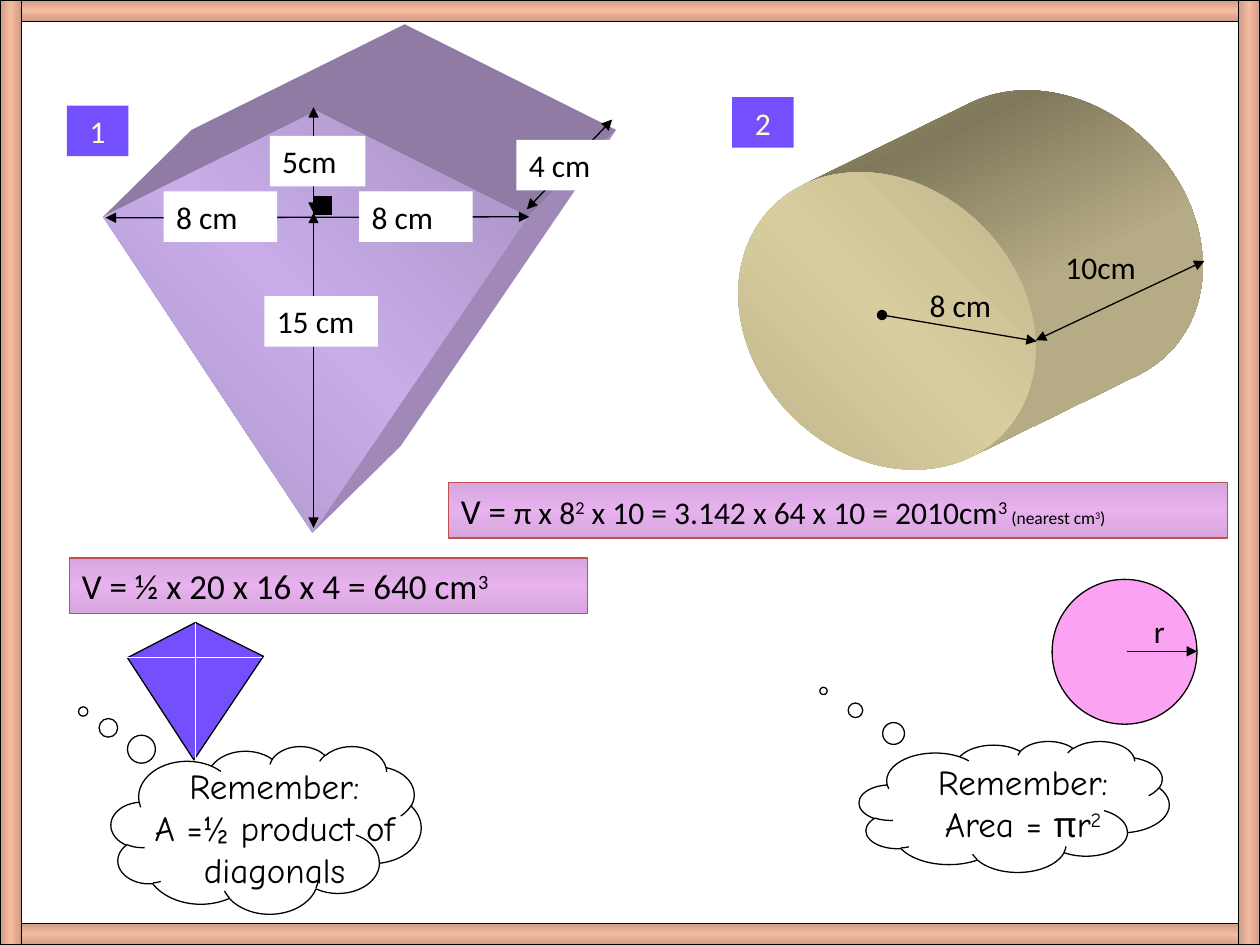
"""Build a slide on the volumes of a kite prism and a cylinder."""
from math import atan2, cos, pi, radians, sin

from lxml.etree import SubElement
from pptx import Presentation
from pptx.dml.color import RGBColor
from pptx.enum.shapes import MSO_CONNECTOR, MSO_SHAPE
from pptx.enum.text import PP_ALIGN
from pptx.oxml.ns import qn
from pptx.util import Cm, Pt

THEME = {
    "font": "Calibri", "note_font": "Comic Neue",
    "small": 10, "label": 18, "large": 20, "line": 0.75,
    "black": "000000", "white": "FFFFFF", "cream": "FFFFCC",
    "violet": "744FFD", "pink": "FCA2F3", "red": "C0504D",
    "prism_top": "907BA4", "prism_side": "A088B9",
    "prism_front": (315, [(0, "A791C3"), (50, "C8ADE9"), (100, "A791C3")]),
    "cylinder_front": (90, [(0, "B5AB84"), (50, "D8CD9E"), (100, "B5AB84")]),
    "cylinder_side": (64, [(0, "A1986F"), (20, "7F785C"), (55, "B5AB84"),
                           (85, "B5AB84"), (100, "8F8768")]),
    "formula": (90, [(0, "D8A6DE"), (50, "E6B1ED"), (100, "D8A6DE")]),
    "rail": (90, [(0, "CE9C86"), (50, "F6BBA0"), (100, "CE9C86")]),
    "post": (0, [(0, "CE9C86"), (50, "F6BBA0"), (100, "CE9C86")]),
}
LABEL, LARGE, SMALL = THEME["label"], THEME["large"], THEME["small"]
WIDTH, HEIGHT, FRAME = 25.4, 19.05, 0.43
LABEL_HEIGHT = 1.02

KITE = [(6.38, 2.24), (2.08, 4.37), (6.3, 10.74), (10.64, 4.37)]
KITE_DEPTH = (1.78, -1.75)
CYLINDER = {"center": (17.88, 6.47), "radii": (3.26, 2.71), "tilt": 45, "depth": (3.37, -1.65)}
SMALL_KITE = [(2.57, 13.26), (3.94, 12.55), (5.31, 13.23), (3.91, 15.32)]

DIMENSIONS = [
    ((2.13, 4.39), (10.67, 4.37), "triangle"),
    ((17.78, 6.35), (20.9, 6.88), "oval"),
    ((6.32, 10.64), (6.32, 4.29), "triangle"),
    ((6.32, 4.29), (6.32, 2.16), "triangle"),
    ((10.62, 4.22), (12.34, 2.41), "triangle"),
    ((20.88, 6.86), (24.28, 5.26), "triangle"),
]
LABELS = [
    ("5cm", 5.44, 2.74, 1.93, "white"),
    ("8 cm", 3.3, 3.86, 2.29, "white"),
    ("8 cm", 7.24, 3.86, 2.29, "white"),
    ("8 cm", 18.49, 5.64, 2.29, None),
    ("15 cm", 5.33, 5.97, 2.29, "white"),
    ("4 cm", 10.41, 2.82, 2.11, "white"),
    ("10cm", 21.23, 4.88, 2.11, None),
]
FORMULAS = [
    ((1.4, 11.25, 10.44, 1.12),
     [("V = ½ x 20 x 16 x 4 = 640 cm", LARGE, False), ("3", LARGE, True)]),
    ((9.04, 9.73, 15.7, 1.12),
     [("V = ", LARGE, False), ("π x 8", LABEL, False), ("2", LABEL, True),
      (" x 10 = 3.142 x 64 x 10 = 2010cm", LABEL, False), ("3 ", LABEL, True),
      ("(nearest cm", SMALL, False), ("3", SMALL, True), (")", SMALL, False)]),
]
REMINDERS = [
    ((2.24, 15.04, 6.25, 3.38), (-0.59, -0.706), (2.13, 15.29, 6.81, 2.79),
     [("A =½ product of diagonals", LARGE, False)]),
    ((17.32, 14.94, 6.25, 2.64), (-0.615, -0.883), (17.22, 15.21, 6.81, 2.79),
     [("Area = πr", LARGE, False), ("2", LARGE, True)]),
]
BADGES = [("1", 1.35, 2.13), ("2", 14.76, 1.96)]


def color(name):
    return RGBColor.from_string(THEME[name])


def paint(shape, fill=None, line=None):
    shape.shadow.inherit = False
    if fill is None:
        shape.fill.background()
    elif isinstance(THEME[fill], str):
        shape.fill.solid()
        shape.fill.fore_color.rgb = color(fill)
    else:
        angle, stops = THEME[fill]
        shape.fill.gradient()
        gradient = shape._element.spPr.find(qn("a:gradFill"))
        for child in list(gradient):
            gradient.remove(child)
        stop_list = SubElement(gradient, qn("a:gsLst"))
        for position, value in stops:
            stop = SubElement(stop_list, qn("a:gs"), pos=str(position * 1000))
            SubElement(stop, qn("a:srgbClr"), val=value)
        SubElement(gradient, qn("a:lin"), ang=str(angle * 60000), scaled="0")
    if line is None:
        shape.line.fill.background()
    else:
        shape.line.color.rgb = color(line)
        shape.line.width = Pt(THEME["line"])
    return shape


def add_box(slide, box, kind=MSO_SHAPE.RECTANGLE, fill=None, line=None):
    return paint(slide.shapes.add_shape(kind, *map(Cm, box)), fill, line)


def add_outline(slide, points, fill, line=None):
    corners = [(Cm(x), Cm(y)) for x, y in points]
    builder = slide.shapes.build_freeform(*corners[0], scale=1.0)
    builder.add_line_segments(corners[1:], close=True)
    return paint(builder.convert_to_shape(), fill, line)


def add_line(slide, start, end, line="black", head=None, tail=None):
    connector = slide.shapes.add_connector(MSO_CONNECTOR.STRAIGHT, *map(Cm, start + end))
    connector.line.color.rgb = color(line)
    connector.line.width = Pt(THEME["line"])
    properties = connector._element.spPr
    for tag, ending in (("a:headEnd", head), ("a:tailEnd", tail)):
        if ending:
            SubElement(properties.find(qn("a:ln")), qn(tag), type=ending)
    SubElement(properties, qn("a:effectLst"))


def write(shape, paragraphs, font="font", ink="black", align=PP_ALIGN.LEFT):
    frame = shape.text_frame
    frame.word_wrap = True
    for index, pieces in enumerate(paragraphs):
        paragraph = frame.add_paragraph() if index else frame.paragraphs[0]
        paragraph.alignment = align
        for text, size, raised in pieces:
            run = paragraph.add_run()
            run.text = text
            run.font.name = THEME[font]
            run.font.size = Pt(size)
            run.font.color.rgb = color(ink)
            if raised:
                run._r.get_or_add_rPr().set("baseline", "30000")


def add_label(slide, text, left, top, width, fill=None, **formatting):
    box = (left, top, width, LABEL_HEIGHT)
    if fill:
        shape = add_box(slide, box, fill=fill)
    else:
        shape = slide.shapes.add_textbox(*map(Cm, box))
    write(shape, [[(text, LABEL, False)]], **formatting)


def add_prism(slide):
    top, left, bottom, right = KITE
    back_top, back_left, back_bottom, back_right = [
        (x + KITE_DEPTH[0], y + KITE_DEPTH[1]) for x, y in KITE]
    add_outline(slide, [left, back_left, back_top, back_right, right, top], "prism_top")
    add_outline(slide, [right, back_right, back_bottom, bottom], "prism_side")
    add_outline(slide, KITE, "prism_front")


def add_cylinder(slide, steps=60):
    (x, y), (major, minor), (dx, dy) = (CYLINDER[key] for key in ("center", "radii", "depth"))
    tilt = radians(CYLINDER["tilt"])
    along, across = dx * cos(tilt) + dy * sin(tilt), dy * cos(tilt) - dx * sin(tilt)
    tangent = atan2(-along / major, across / minor)

    def rim(angle):
        u, v = major * cos(angle), minor * sin(angle)
        return x + u * cos(tilt) - v * sin(tilt), y + u * sin(tilt) + v * cos(tilt)

    near = [rim(tangent + pi * step / steps) for step in range(steps + 1)]
    middle = near[steps // 2]
    if (middle[0] - x) * dx + (middle[1] - y) * dy < 0:
        near = [(2 * x - px, 2 * y - py) for px, py in near]
    far = [(px + dx, py + dy) for px, py in near]
    add_outline(slide, [near[0], *far, near[-1]], "cylinder_side")
    face = add_box(slide, (x - major, y - minor, 2 * major, 2 * minor),
                   MSO_SHAPE.OVAL, "cylinder_front")
    face.rotation = CYLINDER["tilt"]


def main():
    presentation = Presentation()
    presentation.slide_width, presentation.slide_height = Cm(WIDTH), Cm(HEIGHT)
    slide = presentation.slides.add_slide(presentation.slide_layouts[6])
    add_prism(slide)
    add_cylinder(slide)
    add_box(slide, (6.32, 3.96, 0.36, 0.36), fill="black", line="black")
    for start, end, head in DIMENSIONS:
        add_line(slide, start, end, head=head, tail="triangle")
    for label in LABELS:
        add_label(slide, *label)
    for box, pieces in FORMULAS:
        write(add_box(slide, box, fill="formula", line="red"), [pieces])
    for cloud_box, pointer, text_box, rule in REMINDERS:
        cloud = add_box(slide, cloud_box, MSO_SHAPE.CLOUD_CALLOUT, line="black")
        cloud.adjustments[0], cloud.adjustments[1] = pointer
        write(slide.shapes.add_textbox(*map(Cm, text_box)),
              [[("Remember:", LARGE, False)], rule],
              font="note_font", align=PP_ALIGN.CENTER)
    add_outline(slide, SMALL_KITE, "violet", "black")
    add_line(slide, (3.94, 12.55), (3.94, 15.32), line="white")
    add_line(slide, (2.57, 13.26), (5.28, 13.26), line="white")
    add_box(slide, (21.21, 11.68, 2.92, 2.92), MSO_SHAPE.OVAL, "pink", "black")
    add_line(slide, (22.71, 13.13), (24.13, 13.13), tail="triangle")
    add_label(slide, "r", 23.01, 12.22, 0.86)
    for top in (HEIGHT - FRAME, 0):
        add_box(slide, (0, top, WIDTH, FRAME), fill="rail", line="black")
    for left in (WIDTH - FRAME, 0):
        add_box(slide, (left, 0, FRAME, HEIGHT), fill="post", line="black")
    for number, left, top in BADGES:
        add_label(slide, number, left, top, 1.24, "violet", ink="cream", align=PP_ALIGN.CENTER)
    presentation.save("out.pptx")


if __name__ == "__main__":
    main()
